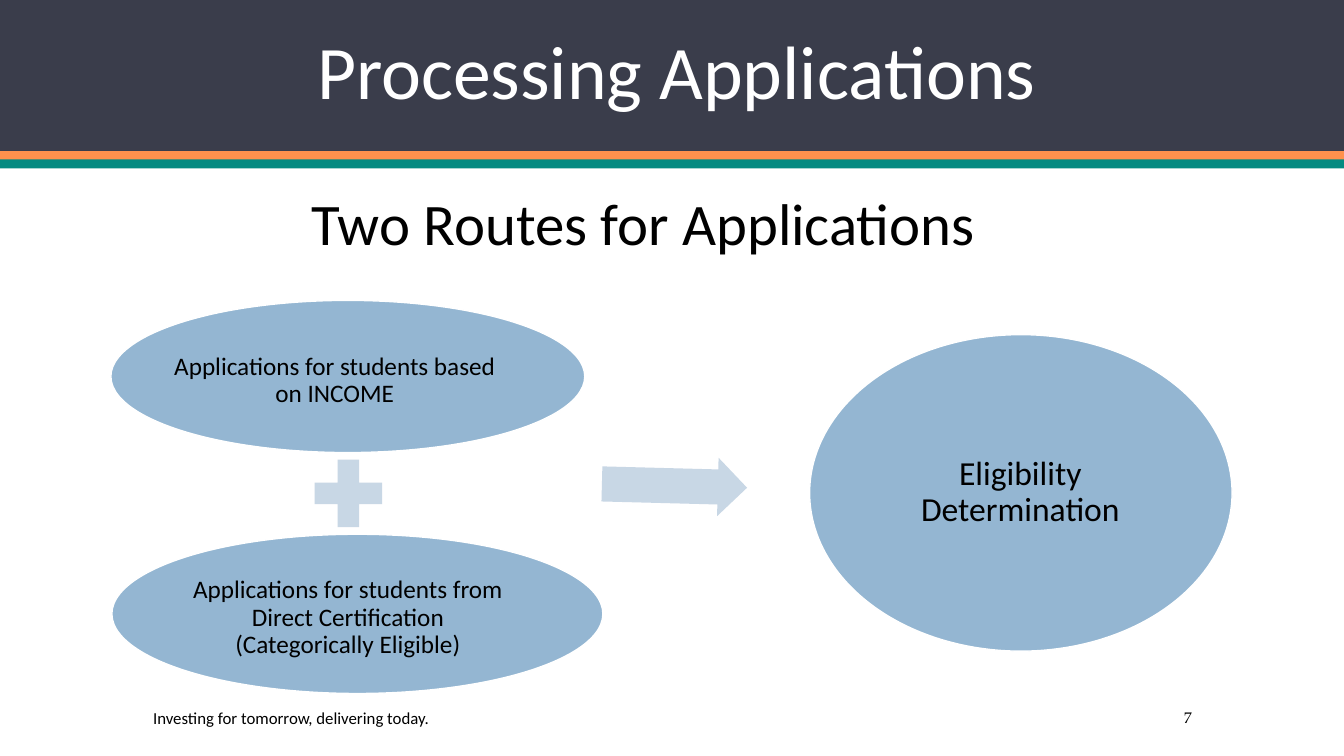
from pptx import Presentation
from pptx.dml.color import RGBColor
from pptx.enum.shapes import MSO_SHAPE
from pptx.enum.text import MSO_ANCHOR, MSO_AUTO_SIZE, PP_ALIGN
from pptx.util import Inches, Pt

RECTANGLE, ELLIPSE = MSO_SHAPE.RECTANGLE, MSO_SHAPE.OVAL
PLUS, ARROW = MSO_SHAPE.MATH_PLUS, MSO_SHAPE.RIGHT_ARROW
LEFT, CENTER, RIGHT = PP_ALIGN.LEFT, PP_ALIGN.CENTER, PP_ALIGN.RIGHT
MIDDLE, BOTTOM = MSO_ANCHOR.MIDDLE, MSO_ANCHOR.BOTTOM
NO_AUTOFIT = MSO_AUTO_SIZE.NONE

NAVY = RGBColor(0x3A, 0x3D, 0x4B)
ORANGE = RGBColor(0xFF, 0x91, 0x4D)
TEAL = RGBColor(0x04, 0x8A, 0x81)
BLUE = RGBColor(0x94, 0xB6, 0xD2)
PALE_BLUE = RGBColor(0xC8, 0xD7, 0xE5)
WHITE = RGBColor(0xFF, 0xFF, 0xFF)
BLACK = RGBColor(0, 0, 0)

SLIDE_WIDTH = 13.33
BANDS = [(0, 1.5, NAVY), (1.5, 0.09, ORANGE), (1.58, 0.09, TEAL)]


def place(shape, left, top, width, height):
    shape.left, shape.top = Inches(left), Inches(top)
    shape.width, shape.height = Inches(width), Inches(height)


def write(shape, text, size, font="Calibri", color=BLACK, align=CENTER,
          anchor=MIDDLE, spacing=0.9, inset=None):
    frame = shape.text_frame
    frame.text = text
    frame.word_wrap = True
    frame.auto_size = NO_AUTOFIT
    frame.vertical_anchor = anchor
    if inset is not None:
        frame.margin_left = frame.margin_right = Inches(inset)
        frame.margin_top = frame.margin_bottom = Inches(inset)
    paragraph = frame.paragraphs[0]
    paragraph.alignment = align
    paragraph.line_spacing = spacing
    for run in paragraph.runs:
        run.font.size = Pt(size)
        run.font.name = font
        run.font.color.rgb = color


def add_text(slide, box, text, size, **text_format):
    shape = slide.shapes.add_textbox(*map(Inches, box))
    write(shape, text, size, **text_format)


def add_figure(slide, kind, box, fill, line=None):
    shape = slide.shapes.add_shape(kind, *map(Inches, box))
    shape.shadow.inherit = False
    shape.fill.solid()
    shape.fill.fore_color.rgb = fill
    if line is None:
        shape.line.fill.background()
    else:
        shape.line.color.rgb = line
        shape.line.width = Pt(1)
    return shape


def add_bubble(slide, box, label_box, text, size, inset):
    add_figure(slide, ELLIPSE, box, BLUE, line=WHITE)
    add_text(slide, label_box, text, size, inset=inset)


def main():
    presentation = Presentation()
    presentation.slide_width = Inches(SLIDE_WIDTH)
    presentation.slide_height = Inches(7.5)
    slide = presentation.slides.add_slide(presentation.slide_layouts[5])

    # Header bands, with the title in front of them
    for top, height, color in BANDS:
        add_figure(slide, RECTANGLE, (0, top, SLIDE_WIDTH, height), color)
    title = slide.shapes.title
    title.element.getparent().append(title.element)
    place(title, 0, 0.07, 13.42, 1.13)
    write(title, "Processing Applications", 54, color=WHITE, anchor=BOTTOM)
    add_text(slide, (1.88, 1.57, 9, 1.04), "Two Routes for Applications", 42,
             anchor=BOTTOM)

    # Two routes leading to the determination
    add_bubble(slide, (1.1, 2.98, 4.7, 1.51), (1.56, 3.4, 3.52, 0.76),
               "Applications for students based on INCOME", 18, 0.02)
    add_bubble(slide, (1.11, 5.3, 4.87, 1.58), (1.69, 5.75, 3.52, 0.76),
               "Applications for students from Direct Certification\v"
               "(Categorically Eligible)", 18, 0.02)
    add_bubble(slide, (8.03, 3.32, 4.19, 3.14), (8.64, 3.78, 2.96, 2.22),
               "Eligibility Determination", 24, 0.03)
    add_figure(slide, PLUS, (3, 4.44, 0.91, 0.91), PALE_BLUE)
    arrow = add_figure(slide, ARROW, (5.97, 4.53, 1.44, 0.58), PALE_BLUE)
    arrow.adjustments[0] = 0.6
    arrow.rotation = 1.5

    # Footer
    add_text(slide, (1.42, 6.97, 6.83, 0.3),
             "Investing for tomorrow, delivering today.", 12,
             align=LEFT, spacing=1.0)
    add_text(slide, (10.42, 6.97, 1.5, 0.3), "7", 11,
             font="TeX Gyre Pagella", align=RIGHT, spacing=1.0)

    presentation.save("out.pptx")


if __name__ == "__main__":
    main()
